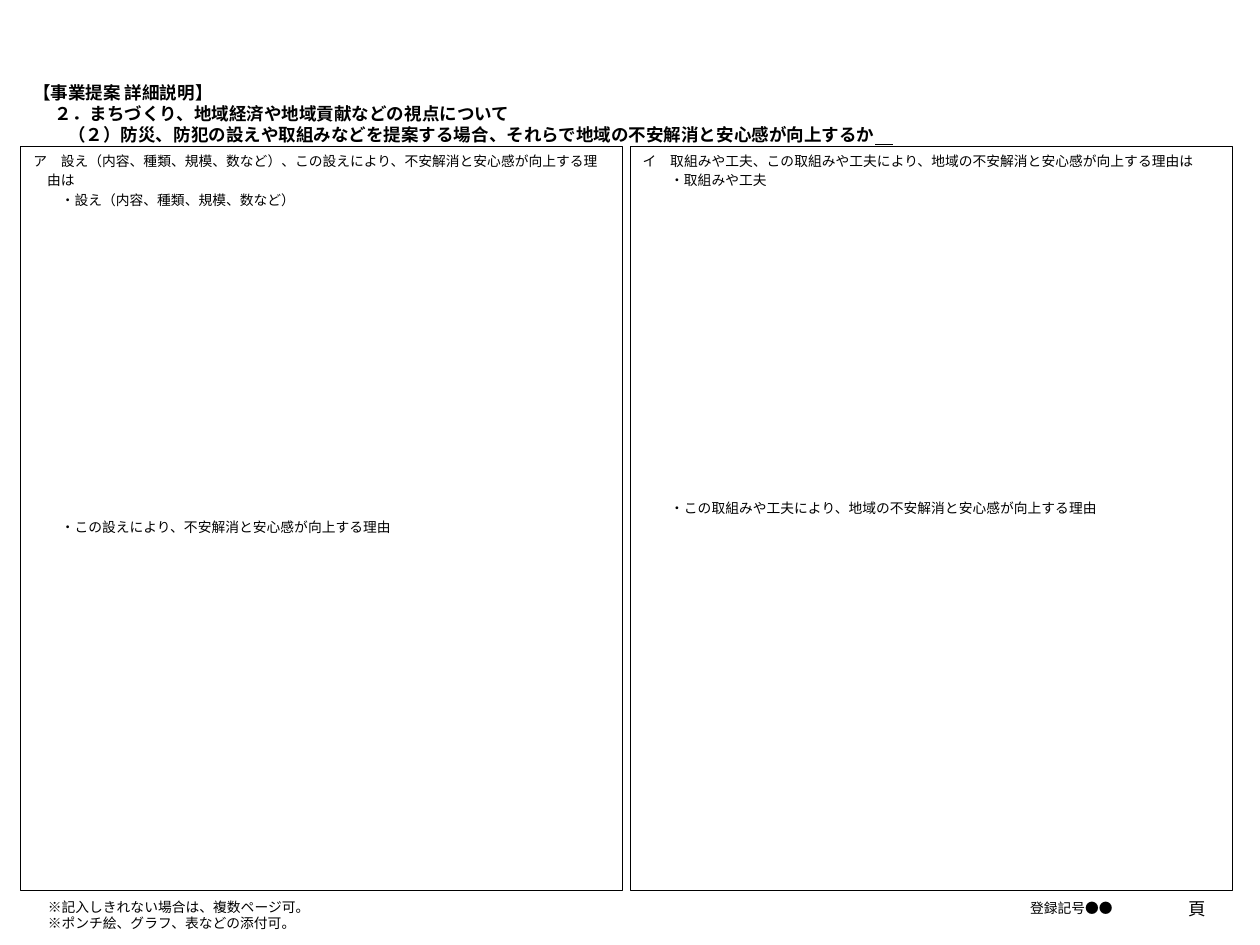
import pptx
import pptx.util
import pptx.dml.color
import pptx.enum.shapes
import pptx.enum.text
import pptx.oxml.ns
import lxml.etree

Cm = pptx.util.Cm
Pt = pptx.util.Pt
Align = pptx.enum.text.PP_ALIGN
Anchor = pptx.enum.text.MSO_ANCHOR

THEME = {
    "font": "Noto Sans CJK JP",
    "ink": pptx.dml.color.RGBColor(0, 0, 0),
    "heading": 14,
    "body": 11,
    "heading_line": 16.8,
    "body_line": 13,
    "body_gap": 2.4,
    "outline": 0.75,
}

ANSWER_ROWS = 17
ANSWER_GAP = ANSWER_ROWS * (THEME["body_line"] + THEME["body_gap"]) - THEME["body_line"]

# text, indent in points
HEADING = [
    ("【事業提案 詳細説明】", 0),
    ("２．まちづくり、地域経済や地域貢献などの視点について", 17),
    ("（２）防災、防犯の設えや取組みなどを提案する場合、それらで地域の不安解消と安心感が向上するか", 28),
]
PANELS = [
    [
        ("ア　設え（内容、種類、規模、数など）、この設えにより、不安解消と安心感が向上する理", 0),
        ("由は", 11),
        ("・設え（内容、種類、規模、数など）", 22),
        ("・この設えにより、不安解消と安心感が向上する理由", 22, ANSWER_GAP),
    ],
    [
        ("イ　取組みや工夫、この取組みや工夫により、地域の不安解消と安心感が向上する理由は", 0),
        ("・取組みや工夫", 22),
        ("・この取組みや工夫により、地域の不安解消と安心感が向上する理由", 22, ANSWER_GAP),
    ],
]
FOOTERS = [
    ([("登録記号●●", 0)], (20.52, 24.92, 11.25, 1.42), Align.RIGHT, "body"),
    ([("※記入しきれない場合は、複数ページ可。", 0), ("※ポンチ絵、グラフ、表などの添付可。", 0)],
     (0.99, 25.12, 17.6, 1.42), Align.LEFT, "body"),
    ([("頁", 0)], (32.39, 24.92, 2.01, 1.42), Align.RIGHT, "heading"),
]

MARGIN_LEFT = 0.58
PANEL_TOP = 4.14
PANEL_WIDTH = 17
PANEL_HEIGHT = 21
PANEL_PITCH = 17.2


def add_run(paragraph, text, size, bold=False, underline=False):
    run = paragraph.add_run()
    run.text = text
    font = run.font
    font.name = THEME["font"]
    font.size = Pt(size)
    font.bold = bold
    font.underline = underline
    font.color.rgb = THEME["ink"]
    east_asian = lxml.etree.SubElement(run._r.get_or_add_rPr(), pptx.oxml.ns.qn("a:ea"))
    east_asian.set("typeface", THEME["font"])


def write_text(shape, lines, style="body", align=Align.LEFT, anchor=Anchor.TOP,
               bold=False, gap=0):
    frame = shape.text_frame
    frame.word_wrap = True
    frame.auto_size = pptx.enum.text.MSO_AUTO_SIZE.NONE
    frame.vertical_anchor = anchor
    frame.margin_left = frame.margin_right = Cm(0.36)
    frame.margin_top = frame.margin_bottom = Cm(0.18)
    for index, (text, indent, *own_gap) in enumerate(lines):
        paragraph = frame.add_paragraph() if index else frame.paragraphs[0]
        paragraph.alignment = align
        paragraph.line_spacing = Pt(THEME[style + "_line"])
        paragraph.space_before = Pt(own_gap[0] if own_gap else gap)
        properties = paragraph._p.get_or_add_pPr()
        properties.set("marL", str(int(Pt(indent))))
        properties.set("indent", "0")
        add_run(paragraph, text, THEME[style], bold)
    return frame


def main():
    presentation = pptx.Presentation()
    presentation.slide_width = Cm(35.56)
    presentation.slide_height = Cm(26.67)
    slide = presentation.slides.add_slide(presentation.slide_layouts[5])

    title = slide.shapes.title
    title.left, title.top, title.width, title.height = map(Cm, (MARGIN_LEFT, 2.13, 34.01, 2.39))
    heading = write_text(title, HEADING, style="heading", bold=True)
    add_run(heading.paragraphs[-1], "　", THEME["heading"], bold=True, underline=True)

    for index, lines in enumerate(PANELS):
        left = MARGIN_LEFT + index * PANEL_PITCH
        panel = slide.shapes.add_shape(
            pptx.enum.shapes.MSO_SHAPE.RECTANGLE,
            *map(Cm, (left, PANEL_TOP, PANEL_WIDTH, PANEL_HEIGHT)))
        panel.shadow.inherit = False
        panel.fill.background()
        panel.line.color.rgb = THEME["ink"]
        panel.line.width = Pt(THEME["outline"])
        write_text(panel, lines, gap=THEME["body_gap"])

    for lines, box, align, style in FOOTERS:
        footer = slide.shapes.add_textbox(*map(Cm, box))
        write_text(footer, lines, style=style, align=align, anchor=Anchor.MIDDLE)

    presentation.save("out.pptx")


if __name__ == "__main__":
    main()
